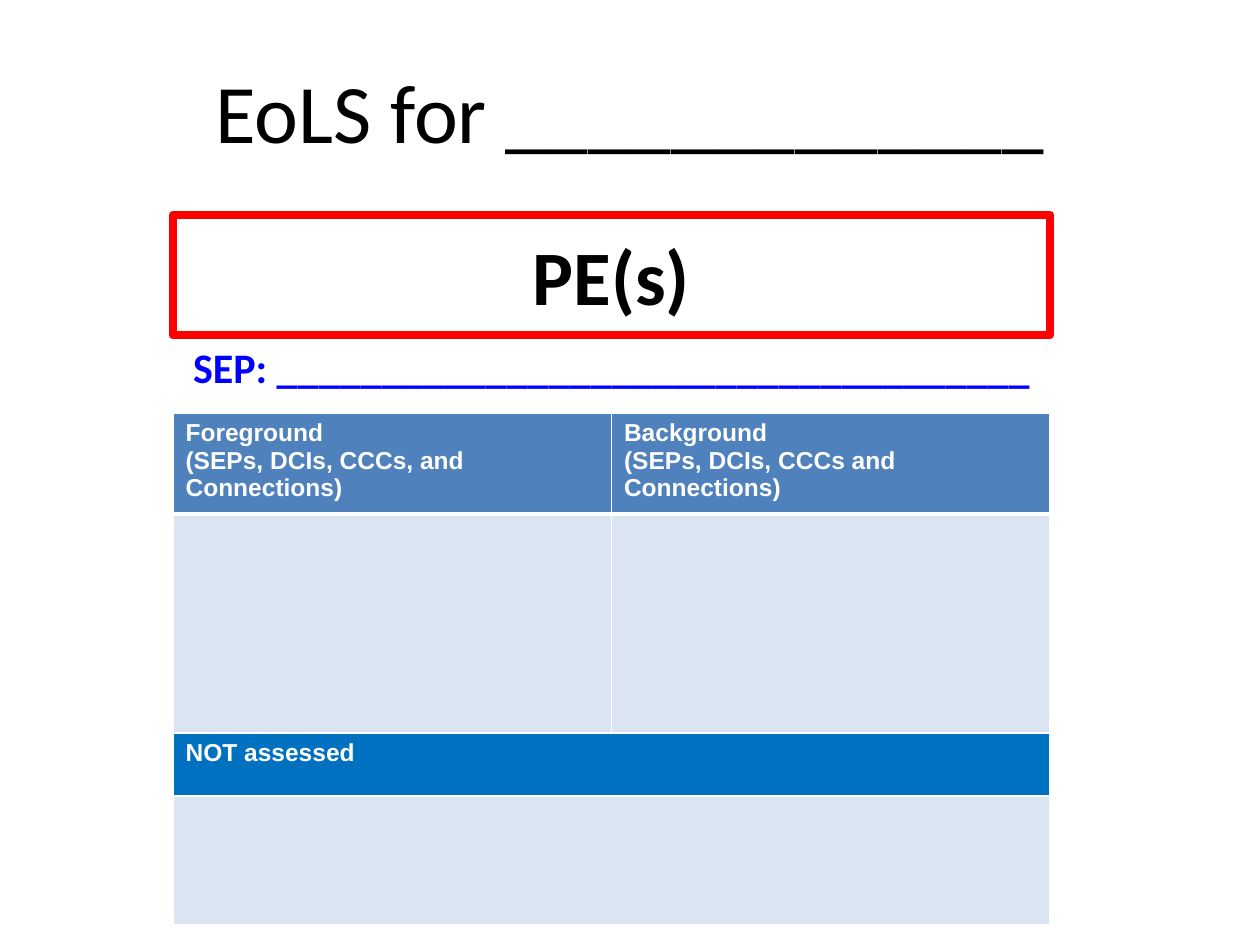
from pptx import Presentation
from pptx.dml.color import RGBColor
from pptx.enum.shapes import MSO_SHAPE as Shape
from pptx.enum.text import MSO_ANCHOR as Anchor, PP_ALIGN as Align
from pptx.oxml import parse_xml
from pptx.oxml.ns import nsdecls
from pptx.util import Emu, Pt

BLACK = RGBColor(0x00, 0x00, 0x00)
WHITE = RGBColor(0xFF, 0xFF, 0xFF)
RED = RGBColor(0xFF, 0x00, 0x00)
BLUE = RGBColor(0x00, 0x00, 0xFF)
HEADER_FILL = RGBColor(0x4F, 0x81, 0xBD)
BAND_FILL = RGBColor(0x00, 0x70, 0xC0)
BODY_FILL = RGBColor(0xDB, 0xE5, 0xF1)

LEFT, WIDTH = 173, 877
ROW_HEIGHTS = (86, 219, 63, 129)


def px(length):
    return Emu(round(length * 914400 / 126))


def style_paragraph(para, font, size, color, bold=True):
    para.font.name = font
    para.font.size = Pt(size)
    para.font.bold = bold
    para.font.color.rgb = color


def fill_line(shape, text, size, color, bold, anchor):
    frame = shape.text_frame
    frame.word_wrap = True
    frame.vertical_anchor = anchor
    para = frame.paragraphs[0]
    para.text = text
    para.alignment = Align.CENTER
    style_paragraph(para, "Calibri", size, color, bold)


def add_line(page, box, text, size, color, bold=True, anchor=Anchor.TOP):
    shape = page.shapes.add_textbox(*map(px, box))
    fill_line(shape, text, size, color, bold, anchor)


def add_expectation_frame(page, box, text):
    frame = page.shapes.add_shape(Shape.RECTANGLE, *map(px, box))
    frame.shadow.inherit = False
    frame.fill.background()
    frame.line.color.rgb = RED
    frame.line.width = Pt(5)
    fill_line(frame, text, 44, BLACK, True, Anchor.MIDDLE)


def set_borders(cell, bottom_width):
    properties = cell._tc.get_or_add_tcPr()
    for side, width in (("L", 1), ("R", 1), ("T", 1), ("B", bottom_width)):
        properties.append(parse_xml(
            f'<a:ln{side} {nsdecls("a")} w="{Pt(width)}"><a:solidFill>'
            f'<a:srgbClr val="{WHITE}"/></a:solidFill></a:ln{side}>'))


def style_cell(cell, fill, lines, bottom_width):
    set_borders(cell, bottom_width)
    cell.fill.solid()
    cell.fill.fore_color.rgb = fill
    if lines:
        cell.text = "\n".join(lines)
        for para in cell.text_frame.paragraphs:
            style_paragraph(para, "Arial", 14, WHITE)


def add_assessment_table(page, box):
    rows = (
        (HEADER_FILL, (("Foreground", "(SEPs, DCIs, CCCs, and Connections)"),
                       ("Background", "(SEPs, DCIs, CCCs and Connections)"))),
        (BODY_FILL, ((), ())),
        (BAND_FILL, (("NOT assessed",),)),
        (BODY_FILL, ((),)),
    )
    table = page.shapes.add_table(len(rows), 2, *map(px, box)).table
    for column in table.columns:
        column.width = px(box[2] / 2)
    for index, (fill, texts) in enumerate(rows):
        table.rows[index].height = px(ROW_HEIGHTS[index])
        if len(texts) == 1:
            table.cell(index, 0).merge(table.cell(index, 1))
        for column, lines in enumerate(texts):
            style_cell(table.cell(index, column), fill, lines, 3 if index == 0 else 1)


def main():
    deck = Presentation()
    deck.slide_width, deck.slide_height = px(1260), px(945)
    page = deck.slides.add_slide(deck.slide_layouts[6])
    add_line(page, (0, 32, 1260, 157), "EoLS for _____________", 47.5, BLACK,
             bold=False, anchor=Anchor.MIDDLE)
    add_expectation_frame(page, (LEFT, 215, WIDTH, 120), "PE(s)")
    add_assessment_table(page, (LEFT, 413, WIDTH, sum(ROW_HEIGHTS)))
    add_line(page, (LEFT, 335, WIDTH, 63),
             "SEP: ____________________________________", 24, BLUE)
    deck.save("out.pptx")


if __name__ == "__main__":
    main()
